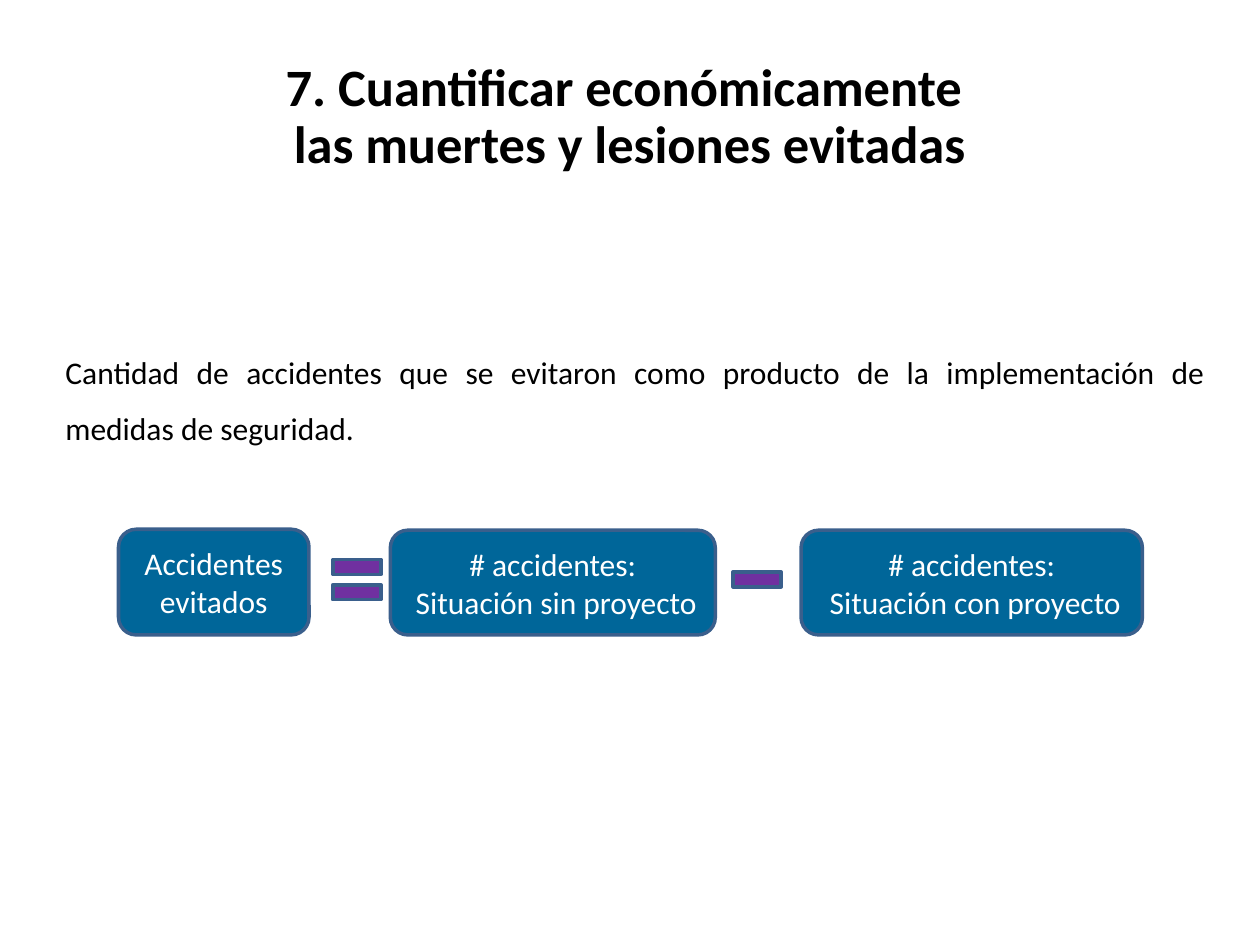
from dataclasses import dataclass

from lxml import etree
from pptx import Presentation
from pptx import util as u
from pptx.dml.color import RGBColor
from pptx.enum import shapes, text
from pptx.oxml.ns import qn

BLACK = RGBColor(0x00, 0x00, 0x00)
WHITE = RGBColor(0xFF, 0xFF, 0xFF)
BLUE = RGBColor(0x00, 0x66, 0x99)
PURPLE = RGBColor(0x70, 0x30, 0xA0)
EDGE = RGBColor(0x3A, 0x5F, 0x8C)

CENTER = text.PP_ALIGN.CENTER
MIDDLE = text.MSO_ANCHOR.MIDDLE
ROUND = shapes.MSO_SHAPE.ROUNDED_RECTANGLE
RECT = shapes.MSO_SHAPE.RECTANGLE


@dataclass
class Term:
    """A labelled box of the equation, in centimetres."""
    left: float
    top: float
    width: float
    height: float
    lines: tuple[str, ...]


@dataclass
class Bar:
    """One stroke of an equals or minus sign, in centimetres."""
    left: float
    top: float


TERMS = [
    Term(2.39, 10.67, 3.84, 2.13, ("Accidentes evitados",)),
    Term(7.87, 10.69, 6.55, 2.11, ("# accidentes:", " Situación sin proyecto")),
    Term(16.15, 10.69, 6.88, 2.11, ("# accidentes:", " Situación con proyecto")),
]
BARS = [Bar(6.71, 11.28), Bar(6.71, 11.79), Bar(14.78, 11.53)]
BAR_SIZE = (0.97, 0.3)


def apply(target, values: dict) -> None:
    for name, value in values.items():
        setattr(target, name, value)


def write(frame, lines: tuple[str, ...], size: int, color: RGBColor,
          bold: bool = False, **layout) -> None:
    """Fill a text frame; layout holds paragraph format values."""
    apply(frame, {"word_wrap": True, "vertical_anchor": MIDDLE,
                  "auto_size": text.MSO_AUTO_SIZE.NONE})
    frame.text = "\n".join(lines)
    for par in frame.paragraphs:
        apply(par, layout)
        apply(par.font, {"name": "Calibri", "size": u.Pt(size), "bold": bold})
        par.font.color.rgb = color


def add_block(slide, kind, left: float, top: float, width: float,
              height: float, fill: RGBColor):
    block = slide.shapes.add_shape(
        kind, u.Cm(left), u.Cm(top), u.Cm(width), u.Cm(height))
    block.shadow.inherit = False
    block.fill.solid()
    block.fill.fore_color.rgb = fill
    block.line.color.rgb = EDGE
    block.line.width = u.Pt(2)
    return block


def add_title(slide) -> None:
    title = slide.shapes.title
    apply(title, {"left": u.Cm(0), "top": u.Cm(1.09),
                  "width": u.Cm(25.4), "height": u.Cm(2.57)})
    write(title.text_frame,
          ("7. Cuantificar económicamente ", "las muertes y lesiones evitadas"),
          30, BLACK, bold=True, alignment=CENTER, line_spacing=0.9)


def add_point(slide) -> None:
    box = slide.shapes.add_textbox(
        u.Cm(1.07), u.Cm(3.3), u.Cm(23.47), u.Cm(11.79))
    frame = box.text_frame
    frame.margin_bottom = u.Cm(2.77)
    props = frame.paragraphs[0]._p.get_or_add_pPr()
    indent = u.Cm(0.96)
    props.set("marL", str(indent))
    props.set("indent", str(-indent))
    etree.SubElement(props, qn("a:buFont")).set("typeface", "Arial")
    etree.SubElement(props, qn("a:buChar")).set("char", "•")
    write(frame, ("Cantidad de accidentes que se evitaron como producto de la "
                  "implementación de medidas de seguridad.",),
          18, BLACK, alignment=text.PP_ALIGN.JUSTIFY, line_spacing=1.5)


def main() -> None:
    deck = Presentation()
    apply(deck, {"slide_width": u.Cm(25.4), "slide_height": u.Cm(19.05)})
    slide = deck.slides.add_slide(deck.slide_layouts[5])
    add_point(slide)
    add_title(slide)
    for term in TERMS:
        block = add_block(slide, ROUND, term.left, term.top,
                          term.width, term.height, BLUE)
        write(block.text_frame, term.lines, 18, WHITE, alignment=CENTER)
    for bar in BARS:
        add_block(slide, RECT, bar.left, bar.top, *BAR_SIZE, PURPLE)
    deck.save("out.pptx")


if __name__ == "__main__":
    main()
